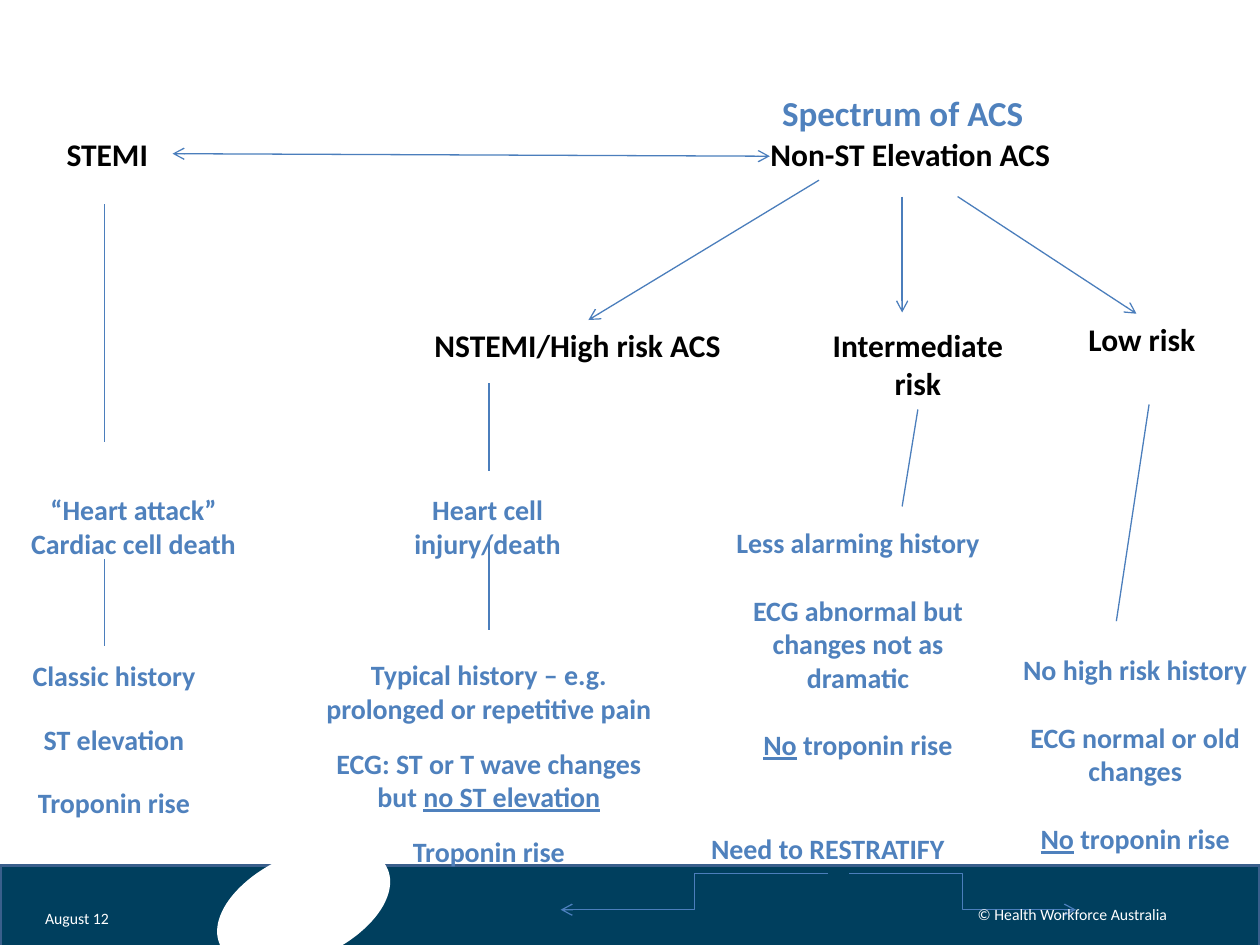
import pptx
import pptx.util
import pptx.dml.color
import pptx.enum.shapes
import pptx.enum.text
import pptx.oxml
import pptx.oxml.ns

RGBColor = pptx.dml.color.RGBColor
BLACK = RGBColor(0x00, 0x00, 0x00)
WHITE = RGBColor(0xFF, 0xFF, 0xFF)
BLUE = RGBColor(0x4F, 0x81, 0xBD)
LINE_BLUE = RGBColor(0x4B, 0x7E, 0xBC)
NAVY = RGBColor(0x00, 0x3F, 0x5E)
BAR_EDGE = RGBColor(0x3A, 0x5F, 0x8C)
ALIGN = pptx.enum.text.PP_ALIGN
ANCHOR = pptx.enum.text.MSO_ANCHOR
KIND = pptx.enum.shapes.MSO_SHAPE
CONNECTOR = pptx.enum.shapes.MSO_CONNECTOR

GRID_COLUMNS, GRID_ROWS = 100, 75

TITLE = ("Spectrum of ACS", (51.2, 6.8, 40.9, 4.4))

# name: (paragraphs, place, alignment)
HEADINGS = {
    "stemi": (["STEMI"], (4.3, 10.2, 9.4, 4), ALIGN.LEFT),
    "nstemi": (["NSTEMI/High risk ACS"], (33.5, 25.4, 26.4, 4), ALIGN.LEFT),
    "low": (["Low risk"], (85.4, 24.9, 12.2, 4), ALIGN.LEFT),
    "non_st": (["Non-ST Elevation ACS"], (59.6, 10.2, 25.3, 4), ALIGN.CENTER),
    "intermediate": (["Intermediate", "risk"], (65, 25.4, 15.7, 7.1), ALIGN.CENTER),
}

# name: (paragraphs with _underlined_ parts, place, gap between paragraphs)
FINDINGS = {
    "heart_attack": (["“Heart attack”", "Cardiac cell death"], (1.2, 38.6, 18.8, 6.4), 0),
    "cell_injury": (["Heart cell injury/death"], (28.1, 38.6, 21.2, 6.4), 0),
    "stemi_signs": (["Classic history", "ST elevation", "Troponin rise"],
                    (0.4, 51.8, 17.3, 13.8), 17),
    "nstemi_signs": (["Typical history – e.g. prolonged or repetitive pain",
                      "ECG: ST or T wave changes but _no ST elevation_",
                      "Troponin rise"], (24.2, 51.7, 29.2, 17.8), 12.2),
    "intermediate_signs": (["Less alarming history",
                            "ECG abnormal but changes not as dramatic",
                            "_No_ troponin rise"], (57.1, 41.2, 22, 19.9), 19.5),
    "low_signs": (["No high risk history", "ECG normal or old changes",
                   "_No_ troponin rise"], (79.1, 51.3, 22, 17.2), 19.5),
    "restratify": (["Need to RESTRATIFY"], (54.7, 65.5, 22, 3.7), 0),
}

FOOTERS = [
    ("August 12", (2.6, 71.4, 8, 2.9), ALIGN.LEFT),
    ("© Health Workforce Australia", (74.4, 70.6, 21.4, 4), ALIGN.CENTER),
]

# (start, end, arrowheads); an end is a point or a (box name, side) pair
STRAIGHT = [
    (("stemi", 3), (61.1, 12.4), ("headEnd", "tailEnd")),
    ((65, 14.3), ("nstemi", 0), ("tailEnd",)),
    ((71.6, 15.6), (71.6, 24.8), ("tailEnd",)),
    ((76, 15.6), (90.2, 24.9), ("tailEnd",)),
    ((8.3, 16.2), (8.3, 35.1), ()),
    ((38.8, 30.4), (38.8, 37.4), ()),
    ((38.8, 43), (38.8, 50), ()),
    ((8.3, 44.4), (8.3, 51.3), ()),
    ((91.2, 32.1), (88.6, 49.3), ()),
    (("intermediate", 2), (71.6, 40.2), ()),
]
ELBOWS = [
    ((65.7, 69.3), (44.5, 72.2), ("tailEnd",)),
    ((67.4, 69.3), (85.4, 72.2), ("tailEnd",)),
]

presentation = pptx.Presentation()
presentation.slide_width = pptx.util.Inches(10)
presentation.slide_height = pptx.util.Inches(7.5)
slide = presentation.slides.add_slide(presentation.slide_layouts[5])
shapes = slide.shapes
column = presentation.slide_width / GRID_COLUMNS
row = presentation.slide_height / GRID_ROWS


def on_grid(numbers):
    return [round(number * unit) for number, unit in zip(numbers, (column, row) * 2)]


def write(shape, paragraphs, size, color, alignment, bold=True, gap=0, anchor=ANCHOR.TOP):
    frame = shape.text_frame
    frame.word_wrap = True
    frame.vertical_anchor = anchor
    for index, text in enumerate(paragraphs):
        paragraph = frame.add_paragraph() if index else frame.paragraphs[0]
        paragraph.alignment = alignment
        paragraph.space_before = pptx.util.Pt(gap if index else 0)
        font = paragraph.font
        font.name, font.size, font.bold = "Calibri", pptx.util.Pt(size), bold
        font.color.rgb = color
        for part, words in enumerate(text.split("_")):
            if words:
                run = paragraph.add_run()
                run.text = words
                if part % 2:
                    run.font.underline = True


def add_text(place, *content, **style):
    box = shapes.add_textbox(*on_grid(place))
    write(box, *content, **style)
    return box


def add_band_shape(kind, place, color):
    shape = shapes.add_shape(kind, *on_grid(place))
    shape.shadow.inherit = False
    shape.fill.solid()
    shape.fill.fore_color.rgb = color
    shape.line.fill.background()
    return shape


def add_line(kind, start, end, arrowheads):
    points = [(0, 0) if isinstance(point[0], str) else point for point in (start, end)]
    connector = shapes.add_connector(kind, *on_grid(points[0] + points[1]))
    for point, join in ((start, connector.begin_connect), (end, connector.end_connect)):
        if isinstance(point[0], str):
            join(boxes[point[0]], point[1])
    connector.line.color.rgb = LINE_BLUE
    connector.line.width = pptx.util.Pt(0.75)
    outline = connector.line._get_or_add_ln()
    for arrowhead in arrowheads:
        pptx.oxml.ns.qn("a:" + arrowhead)
        element = pptx.oxml.parse_xml(
            f'<a:{arrowhead} {pptx.oxml.ns.nsdecls("a")} type="arrow"/>')
        outline.append(element)
    connector._element.spPr.append(
        pptx.oxml.parse_xml(f'<a:effectLst {pptx.oxml.ns.nsdecls("a")}/>'))


bar = add_band_shape(KIND.RECTANGLE, (0, 68.7, 100, 6.5), NAVY)
bar.line.color.rgb = BAR_EDGE
bar.line.width = pptx.util.Pt(2)
add_band_shape(KIND.OVAL, (16.8, 67.8, 14.6, 8.3), WHITE).rotation = 335.7

title_text, title_place = TITLE
title = shapes.title
title.left, title.top, title.width, title.height = on_grid(title_place)
write(title, [title_text], 20, BLUE, ALIGN.CENTER)

boxes = {}
for name, (paragraphs, place, alignment) in HEADINGS.items():
    boxes[name] = add_text(place, paragraphs, 18, BLACK, alignment)
for name, (paragraphs, place, gap) in FINDINGS.items():
    boxes[name] = add_text(place, paragraphs, 16, BLUE, ALIGN.CENTER, gap=gap)

for line in STRAIGHT:
    add_line(CONNECTOR.STRAIGHT, *line)
for line in ELBOWS:
    add_line(CONNECTOR.ELBOW, *line)

for text, place, alignment in FOOTERS:
    add_text(place, [text], 9, WHITE, alignment, bold=False, anchor=ANCHOR.MIDDLE)

presentation.save("out.pptx")
